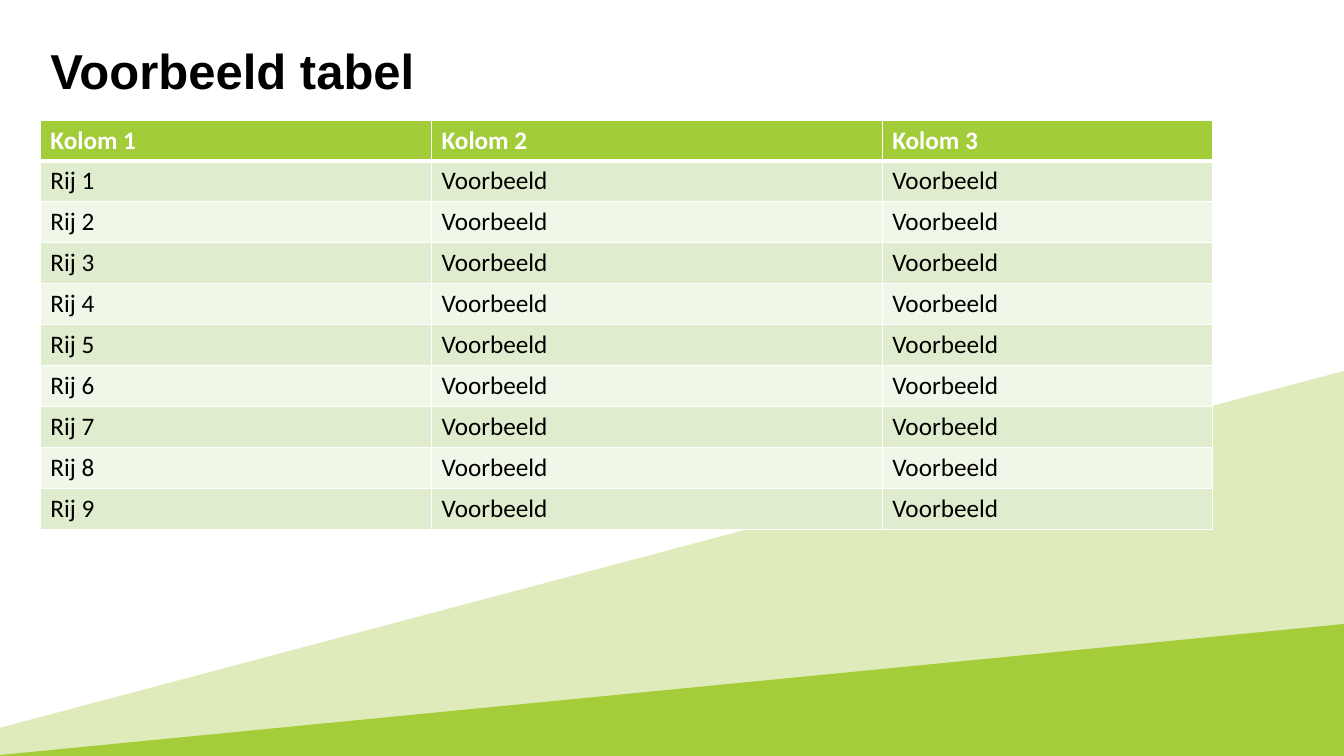
from dataclasses import dataclass

from lxml import etree
from pptx import Presentation
from pptx.dml.color import RGBColor
from pptx.enum.text import MSO_ANCHOR, PP_ALIGN
from pptx.oxml.ns import qn
from pptx.util import Inches, Pt

LEFT = PP_ALIGN.LEFT
MIDDLE = MSO_ANCHOR.MIDDLE
TITLE_ONLY = 5

TITLE = "Voorbeeld tabel"
HEADINGS = ["Kolom 1", "Kolom 2", "Kolom 3"]
ROWS = [[f"Rij {number}", "Voorbeeld", "Voorbeeld"] for number in range(1, 10)]

SLIDE_SIZE = (13.33, 7.5)
TITLE_BOX = (0.4, 0.39, 11.5, 0.69)
TABLE_ORIGIN = (0.4, 1.19)
COLUMN_WIDTHS = [3.88, 4.47, 3.28]
ROW_HEIGHT = 0.406


@dataclass(frozen=True)
class Theme:
    title_font: str = "Arial"
    table_font: str = "Calibri"
    title_size: int = 35
    table_size: int = 18
    black: str = "000000"
    white: str = "FFFFFF"
    pale_slope: str = "E0EBBB"
    green_slope: str = "A4CD39"
    header: str = "A3CC39"
    bands: tuple = ("E0ECCE", "F0F6E8")
    rule: int = 1
    header_rule: int = 3


THEME = Theme()

SLOPES = [
    (THEME.pale_slope, [(13.33, 3.68), (13.33, 7.5), (0, 7.5), (0, 7.22)]),
    (THEME.green_slope, [(0, 7.49), (0, 7.5), (13.33, 7.5), (13.33, 6.19)]),
]


def add_run(paragraph, text, font, size, color, bold):
    run = paragraph.add_run()
    run.text = text
    run.font.name = font
    run.font.size = Pt(size)
    run.font.bold = bold
    run.font.color.rgb = RGBColor.from_string(color)


def add_slope(slide, color, corners):
    start, *others = [(Inches(x), Inches(y)) for x, y in corners]
    outline = slide.shapes.build_freeform(*start)
    outline.add_line_segments(others, close=True)
    slope = outline.convert_to_shape()
    slope.shadow.inherit = False
    slope.fill.solid()
    slope.fill.fore_color.rgb = RGBColor.from_string(color)
    slope.line.fill.background()


def add_title(slide):
    title = slide.shapes.title
    title.left, title.top, title.width, title.height = map(Inches, TITLE_BOX)
    frame = title.text_frame
    frame.word_wrap = False
    frame.vertical_anchor = MIDDLE
    paragraph = frame.paragraphs[0]
    paragraph.alignment = LEFT
    paragraph.line_spacing = 0.9
    add_run(paragraph, TITLE, THEME.title_font, THEME.title_size, THEME.black, True)


def set_borders(cell, widths):
    properties = cell._tc.get_or_add_tcPr()
    for position, (side, width) in enumerate(widths.items()):
        border = etree.Element(qn(f"a:{side}"), w=str(Pt(width)))
        fill = etree.SubElement(border, qn("a:solidFill"))
        etree.SubElement(fill, qn("a:srgbClr"), val=THEME.white)
        properties.insert(position, border)


def fill_cell(cell, text, row):
    is_header = row == 0
    background = THEME.header if is_header else THEME.bands[(row - 1) % 2]
    color = THEME.white if is_header else THEME.black
    cell.fill.solid()
    cell.fill.fore_color.rgb = RGBColor.from_string(background)
    set_borders(cell, {
        "lnL": THEME.rule,
        "lnR": THEME.rule,
        "lnT": THEME.header_rule if row == 1 else THEME.rule,
        "lnB": THEME.header_rule if is_header else THEME.rule,
    })
    add_run(cell.text_frame.paragraphs[0], text, THEME.table_font,
            THEME.table_size, color, is_header)


def add_example_table(slide):
    content = [HEADINGS] + ROWS
    size = (sum(COLUMN_WIDTHS), ROW_HEIGHT * len(content))
    table = slide.shapes.add_table(
        len(content), len(HEADINGS), *map(Inches, TABLE_ORIGIN + size)).table
    for column, width in zip(table.columns, COLUMN_WIDTHS):
        column.width = Inches(width)
    for row, texts in enumerate(content):
        table.rows[row].height = Inches(ROW_HEIGHT)
        for column, text in enumerate(texts):
            fill_cell(table.cell(row, column), text, row)


def main():
    deck = Presentation()
    deck.slide_width, deck.slide_height = map(Inches, SLIDE_SIZE)
    slide = deck.slides.add_slide(deck.slide_layouts[TITLE_ONLY])
    for color, corners in SLOPES:
        add_slope(slide, color, corners)
    add_title(slide)
    add_example_table(slide)
    deck.save("out.pptx")


if __name__ == "__main__":
    main()
